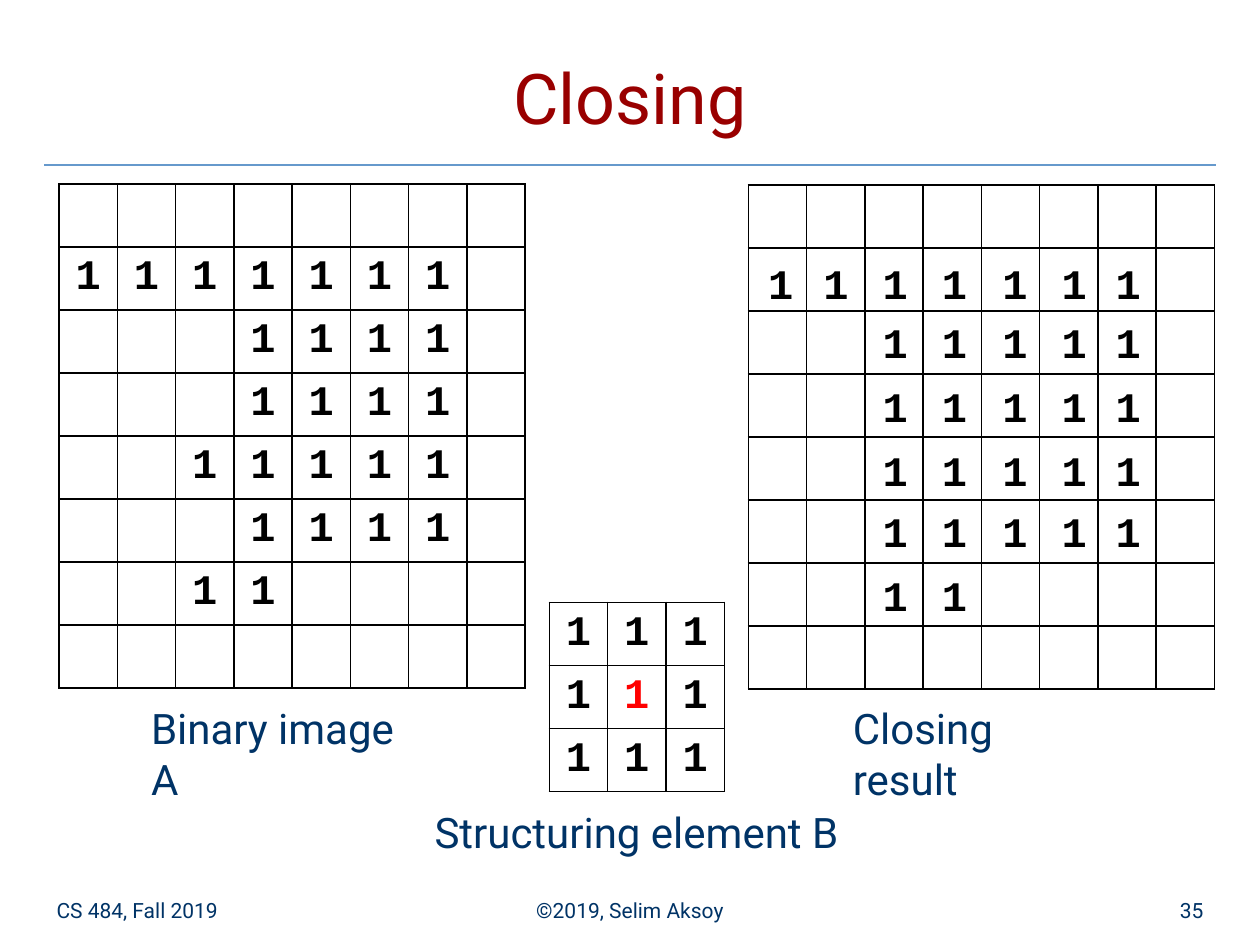
from lxml import etree
from pptx import Presentation
from pptx import util as u
from pptx.dml.color import RGBColor
from pptx.enum import shapes, text
from pptx.oxml.ns import qn

In = u.Inches
NAVY, MAROON, BLUE, BLACK, RED = "003366", "990000", "6699CC", "000000", "FF0000"
LEFT, MID, RIGHT = text.PP_ALIGN.LEFT, text.PP_ALIGN.CENTER, text.PP_ALIGN.RIGHT
TOP, CORE, BASE = (text.MSO_ANCHOR.TOP, text.MSO_ANCHOR.MIDDLE,
                   text.MSO_ANCHOR.BOTTOM)
DIGIT = dict(size=24, face="Courier New", ink=BLACK, bold=True, align=MID)

IMAGE = ["........", "1111111.", "...1111.", "...1111.",
         "..11111.", "...1111.", "..11....", "........"]
EMPTY = ["." * 8] * 8
KERNEL = ["111", "1R1", "111"]
CLOSED = ["1111111", "..11111", "..11111", "..11111", "..11111", "..11..."]
MARK_X = [5.94, 6.38, 6.85, 7.32, 7.8, 8.27, 8.7]
MARK_Y = [2.02, 2.49, 3, 3.51, 3.99, 4.5]


def color(code):
    return RGBColor.from_string(code)


def write(frame, words, size=12, face="Roboto", ink=NAVY, bold=False, align=LEFT):
    para = frame.paragraphs[0]
    para.alignment = align
    run = para.add_run()
    run.text = words
    run.font.size = u.Pt(size)
    run.font.name = face
    run.font.bold = bold
    run.font.color.rgb = color(ink)


def label(slide, box, words, anchor=TOP, inset=None, **form):
    frame = slide.shapes.add_textbox(*map(In, box)).text_frame
    frame.word_wrap = True
    frame.vertical_anchor = anchor
    if inset is not None:
        frame.margin_left = frame.margin_right = In(inset)
        frame.margin_top = frame.margin_bottom = In(inset)
    write(frame, words, **form)


def border(cell):
    props = cell._tc.get_or_add_tcPr()
    for spot, side in enumerate(("a:lnL", "a:lnR", "a:lnT", "a:lnB")):
        line = etree.Element(qn(side), w=str(u.Pt(1)))
        fill = etree.SubElement(line, qn("a:solidFill"))
        etree.SubElement(fill, qn("a:srgbClr"), val=BLACK)
        props.insert(spot, line)


def grid(slide, box, rows):
    """Bordered table: 1 is a black one, R a red one, a dot is empty."""
    high, wide = len(rows), len(rows[0])
    table = slide.shapes.add_table(high, wide, *map(In, box)).table
    table.first_row = table.horz_banding = False
    for col in table.columns:
        col.width = In(box[2] / wide)
    for r, row in enumerate(rows):
        table.rows[r].height = In(box[3] / high)
        for c, mark in enumerate(row):
            cell = table.cell(r, c)
            cell.fill.background()
            cell.vertical_anchor = CORE
            border(cell)
            if mark != ".":
                ink = RED if mark == "R" else BLACK
                write(cell.text_frame, "1", **{**DIGIT, "ink": ink})


def marks(slide, rows):
    """Ones laid over the result grid."""
    for y, row in zip(MARK_Y, rows):
        for x, mark in zip(MARK_X, row):
            if mark == "1":
                label(slide, (x, y, 0.51, 0.44), "1", CORE, 0.02, **DIGIT)


def header(slide, box):
    x, y, w, h = box
    label(slide, box, "Closing", BASE, size=40, ink=MAROON, align=MID)
    rule = slide.shapes.add_connector(shapes.MSO_CONNECTOR.STRAIGHT,
                                      In(x), In(1.31), In(x + w), In(1.31))
    rule.line.color.rgb = color(BLUE)
    rule.line.width = u.Pt(0.75)
    etree.SubElement(rule._element.spPr, qn("a:effectLst"))


def footer(slide, box):
    x, y, w, h = box
    side, core = 2.08, 3.17
    label(slide, (x, y, side, h), "CS 484, Fall 2019", BASE)
    label(slide, (x + (w - core) / 2, y, core, h), "©2019, Selim Aksoy",
          BASE, align=MID)
    label(slide, (x + w - side, y, side, h), "35", BASE, align=RIGHT)


def main():
    deck = Presentation()
    deck.slide_width, deck.slide_height = In(10), In(7.5)
    slide = deck.slides.add_slide(deck.slide_layouts[6])

    # Title, rule and footer
    header(slide, (0.35, 0.21, 9.3, 0.94))
    footer(slide, (0.35, 7.02, 9.3, 0.35))

    # Captions
    label(slide, (1.1, 5.53, 2.35, 0.5), "Binary image A", size=24)
    label(slide, (3.35, 6.35, 3.45, 0.5), "Structuring element B", size=24)
    label(slide, (6.67, 5.53, 2.15, 0.5), "Closing result", size=24)

    # Grids
    grid(slide, (5.94, 1.47, 3.7, 4), EMPTY)
    grid(slide, (0.47, 1.46, 3.7, 4), IMAGE)
    grid(slide, (4.36, 4.78, 1.39, 1.5), KERNEL)
    marks(slide, CLOSED)

    deck.save("out.pptx")


if __name__ == "__main__":
    main()
